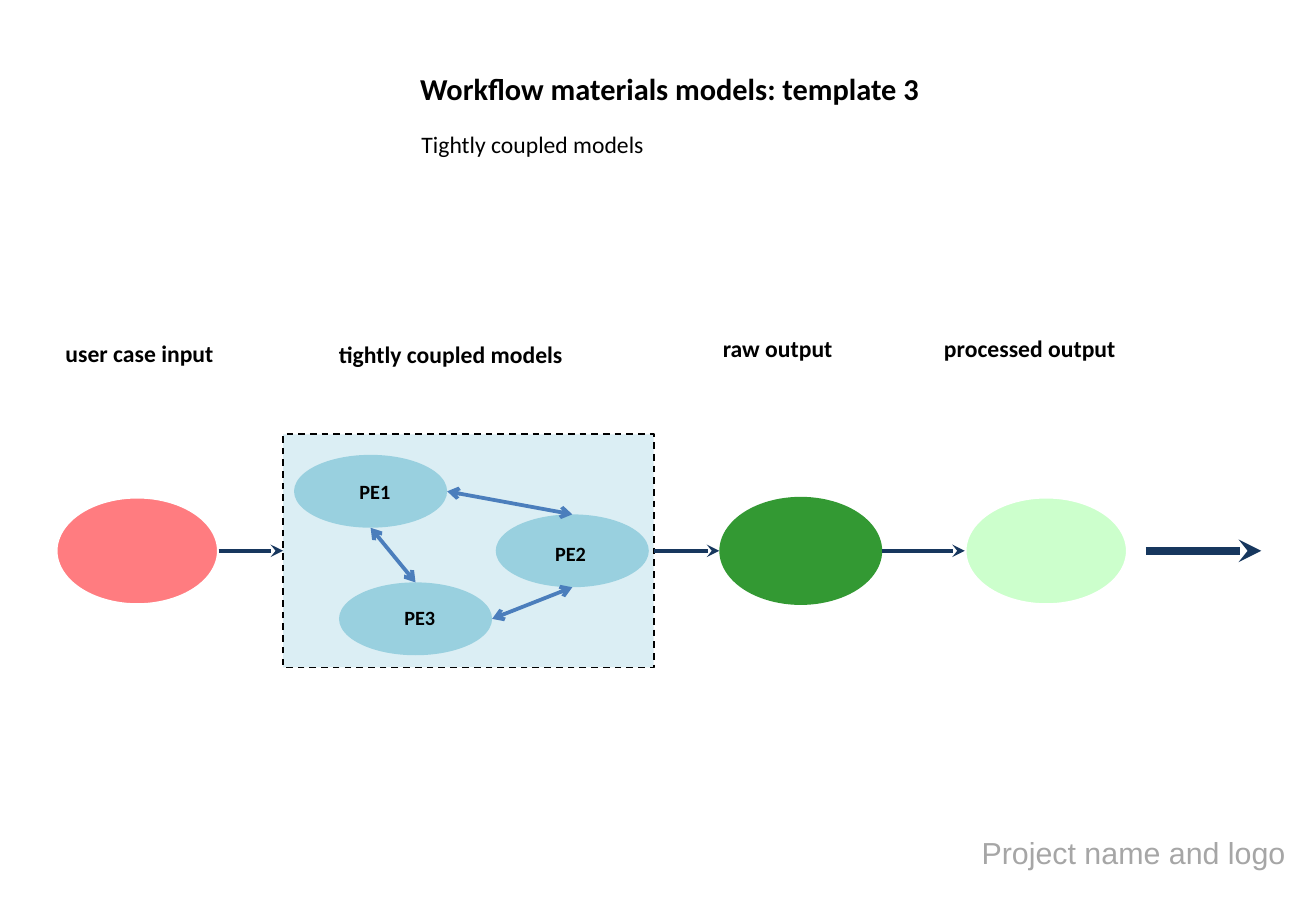
import pptx
import pptx.dml.color
import pptx.enum.dml
import pptx.enum.shapes
import pptx.enum.text
import pptx.oxml
import pptx.oxml.ns
import pptx.util

Inches = pptx.util.Inches
Pt = pptx.util.Pt
SHAPE = pptx.enum.shapes.MSO_SHAPE

NAVY, BLUE = "17375E", "4B7EBC"
STAGE_WIDTH, STAGE_HEIGHT = 1.34, 0.89
MODEL_WIDTH, MODEL_HEIGHT = 1.26, 0.6


def rgb(color):
    return pptx.dml.color.RGBColor.from_string(color)


def add_label(slide, box, text, size, bold=False, color="000000", font="Calibri"):
    label = slide.shapes.add_textbox(*map(Inches, box))
    frame = label.text_frame
    frame.word_wrap = False
    frame.auto_size = pptx.enum.text.MSO_AUTO_SIZE.SHAPE_TO_FIT_TEXT
    run = frame.paragraphs[0].add_run()
    run.text = text
    run.font.name = font
    run.font.size = Pt(size)
    run.font.bold = bold
    run.font.color.rgb = rgb(color)


def add_block(slide, preset, box, fill, line=None, line_width=1):
    block = slide.shapes.add_shape(preset, *map(Inches, box))
    block.shadow.inherit = False
    block.fill.solid()
    block.fill.fore_color.rgb = rgb(fill)
    if line:
        block.line.color.rgb = rgb(line)
        block.line.width = Pt(line_width)
    else:
        block.line.fill.background()
    return block


def add_arrow(slide, start, end, color, width, head=None, tail=None):
    """Draw a straight arrow; head is the tip at start, tail the tip at end."""
    arrow = slide.shapes.add_connector(
        pptx.enum.shapes.MSO_CONNECTOR.STRAIGHT, *map(Inches, start + end))
    arrow.line.color.rgb = rgb(color)
    arrow.line.width = Pt(width)
    line_xml = arrow.line._get_or_add_ln()
    for tag, tip in (("a:headEnd", head), ("a:tailEnd", tail)):
        if tip:
            line_xml.append(pptx.oxml.parse_xml(
                f'<{tag} {pptx.oxml.ns.nsdecls("a")} type="{tip}"/>'))
    arrow._element.spPr.append(
        pptx.oxml.parse_xml(f'<a:effectLst {pptx.oxml.ns.nsdecls("a")}/>'))
    return arrow


def add_header(slide, left, top):
    add_label(slide, (left, top, 4.34, 0.4),
              "Workflow materials models: template 3", 18, bold=True)
    add_label(slide, (left + 0.01, top + 0.49, 2.05, 0.34),
              "Tightly coupled models", 14)


def add_column_headings(slide, left, top):
    for dx, dy, width, text in (
        (0, 0.04, 1.43, "user case input"),
        (2.25, 0.05, 2.06, "tightly coupled models"),
        (5.41, 0, 1.11, "raw output"),
        (7.23, 0, 1.62, "processed output"),
    ):
        add_label(slide, (left + dx, top + dy, width, 0.34), text, 14, bold=True)


def add_coupled_models(slide, left, top, width, height):
    """Draw the dashed frame with its three linked models and return the frame."""
    frame = add_block(slide, SHAPE.RECTANGLE, (left, top, width, height),
                      "DBEEF4", line="000000")
    frame.line.dash_style = pptx.enum.dml.MSO_LINE.DASH

    sides = {}
    for name, dx, dy, label_dx, label_dy in (
        ("PE1", 0.09, 0.17, 0.44, 0.15),
        ("PE2", 1.75, 0.66, 0.39, 0.17),
        ("PE3", 0.46, 1.22, 0.44, 0.14),
    ):
        x, y = left + dx, top + dy
        add_block(slide, SHAPE.OVAL, (x, y, MODEL_WIDTH, MODEL_HEIGHT), "99D0DF")
        add_label(slide, (x + label_dx, y + label_dy, 0.46, 0.3), name, 12, bold=True)
        sides[name] = {
            "top": (x + MODEL_WIDTH / 2, y),
            "bottom": (x + MODEL_WIDTH / 2, y + MODEL_HEIGHT),
            "right": (x + MODEL_WIDTH, y + MODEL_HEIGHT / 2),
        }

    for source, source_side, target, target_side in (
        ("PE2", "bottom", "PE3", "right"),
        ("PE2", "top", "PE1", "right"),
        ("PE1", "bottom", "PE3", "top"),
    ):
        add_arrow(slide, sides[source][source_side], sides[target][target_side],
                  BLUE, 2.25, head="arrow", tail="arrow")
    return frame


def add_workflow(slide, left, top, width):
    """Draw the stages from user input to processed output, joined by arrows."""
    middle = top + STAGE_HEIGHT / 2
    frame_left, frame_width, frame_height = left + 1.87, 3.05, 1.92
    frame_right = frame_left + frame_width
    raw_left, processed_left = left + 5.46, left + 7.48

    frame = add_coupled_models(slide, frame_left, middle - frame_height / 2,
                               frame_width, frame_height)
    for x, fill, line in (
        (left, "FF7C80", "FFFFFF"),
        (raw_left, "339933", None),
        (processed_left, "CCFFCC", "FFFFFF"),
    ):
        add_block(slide, SHAPE.OVAL, (x, top, STAGE_WIDTH, STAGE_HEIGHT),
                  fill, line, 2)

    into_models, out_of_models, _, _ = [
        add_arrow(slide, (start, middle), (end, middle), NAVY, weight, tail="stealth")
        for start, end, weight in (
            (left + STAGE_WIDTH, frame_left, 2.5),
            (frame_right, raw_left, 2.5),
            (raw_left + STAGE_WIDTH, processed_left, 2.5),
            (left + width - 0.95, left + width, 4.5),
        )
    ]
    into_models.end_connect(frame, 1)
    out_of_models.begin_connect(frame, 3)


def add_footer(slide, left, top):
    add_label(slide, (left, top, 2.73, 0.4), "Project name and logo", 18,
              color="A6A6A6", font="Arial")


def main():
    deck = pptx.Presentation()
    deck.slide_width, deck.slide_height = Inches(10.83), Inches(7.5)
    slide = deck.slides.add_slide(deck.slide_layouts[6])
    add_header(slide, 3.36, 0.53)
    add_column_headings(slide, 0.44, 2.7)
    add_workflow(slide, 0.46, 4.09, 9.92)
    add_footer(slide, 7.98, 6.82)
    deck.save("out.pptx")


if __name__ == "__main__":
    main()
